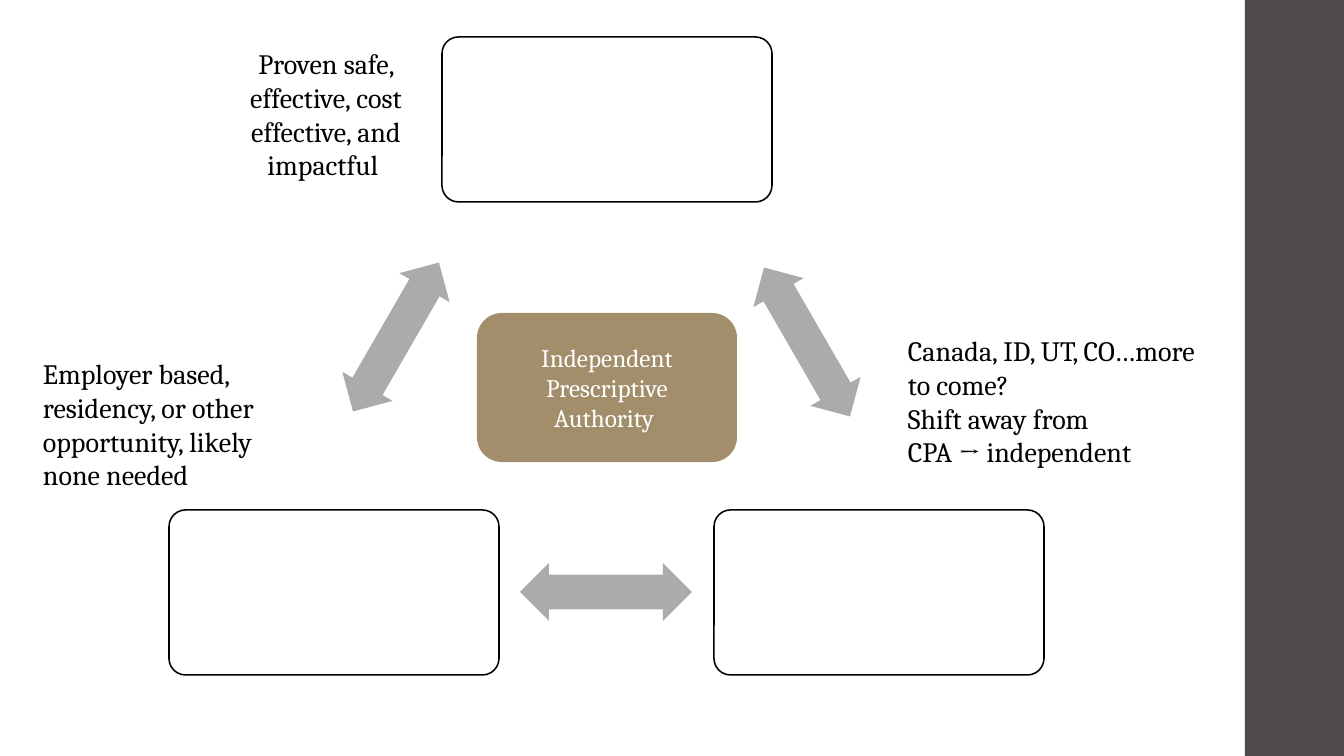
import pptx
import pptx.dml.color
import pptx.enum.shapes
import pptx.enum.text
import pptx.util

EMU_PER_PX = 914400 / 100.8
WHITE = pptx.dml.color.RGBColor(0xFF, 0xFF, 0xFF)
BLACK = pptx.dml.color.RGBColor(0x00, 0x00, 0x00)
CHARCOAL = pptx.dml.color.RGBColor(0x4F, 0x4B, 0x4B)
GREY = pptx.dml.color.RGBColor(0xAB, 0xAB, 0xAB)
TAN = pptx.dml.color.RGBColor(0xA2, 0x8E, 0x6A)

SHAPES = pptx.enum.shapes.MSO_SHAPE
ALIGN = pptx.enum.text.PP_ALIGN
ANCHOR = pptx.enum.text.MSO_ANCHOR

deck = pptx.Presentation()
deck.slide_width = round(1344 * EMU_PER_PX)
deck.slide_height = round(756 * EMU_PER_PX)
page = deck.slides.add_slide(deck.slide_layouts[6])


def add_filled(kind, bounds, color):
    """Add a shadowless, unlined shape; bounds are left, top, width, height in px."""
    shape = page.shapes.add_shape(kind, *[round(px * EMU_PER_PX) for px in bounds])
    shape.shadow.inherit = False
    shape.fill.solid()
    shape.fill.fore_color.rgb = color
    shape.line.fill.background()
    return shape


def write_lines(box, lines, size, color, align):
    box.text_frame.word_wrap = True
    box.text_frame.text = "\n".join(lines)
    for para in box.text_frame.paragraphs:
        para.alignment = align
        for name, value in {"name": "Cambria", "size": pptx.util.Pt(size)}.items():
            setattr(para.font, name, value)
        para.font.color.rgb = color


add_filled(SHAPES.RECTANGLE, (1245, 0, 99, 756), CHARCOAL)

# Triangle of empty cards
for left, top in [(442, 37), (714, 510), (169, 510)]:
    card = add_filled(SHAPES.ROUNDED_RECTANGLE, (left, top, 330, 165), WHITE)
    card.adjustments[0] = 0.1
    card.line.color.rgb = BLACK
    card.line.width = pptx.util.Pt(1.1)

# Arrows along the sides of the triangle
for left, top, angle in [(721, 313, 60), (520, 563, 180), (310, 308, 300)]:
    arrow = add_filled(SHAPES.LEFT_RIGHT_ARROW, (left, top, 172, 58), GREY)
    arrow.adjustments[0] = 0.6
    arrow.adjustments[1] = 0.5
    arrow.rotation = angle

center = add_filled(SHAPES.ROUNDED_RECTANGLE, (477, 313, 260, 149), TAN)
center.text_frame.vertical_anchor = ANCHOR.MIDDLE
write_lines(center, ["Independent Prescriptive Authority "], 18, WHITE, ALIGN.CENTER)

notes = [
    ((33, 352, 281, 146), ALIGN.LEFT,
     ["Employer based, residency, or other opportunity, likely none needed"]),
    ((898, 329, 333, 146), ALIGN.LEFT,
     ["Canada, ID, UT, CO…more to come?", "Shift away from", "CPA → independent"]),
    ((196, 42, 260, 146), ALIGN.CENTER,
     ["Proven safe, effective, cost effective, and impactful "]),
]
for bounds, align, lines in notes:
    box = page.shapes.add_textbox(*[round(px * EMU_PER_PX) for px in bounds])
    write_lines(box, lines, 20, BLACK, align)
    box.text_frame.auto_size = pptx.enum.text.MSO_AUTO_SIZE.SHAPE_TO_FIT_TEXT

deck.save("out.pptx")
